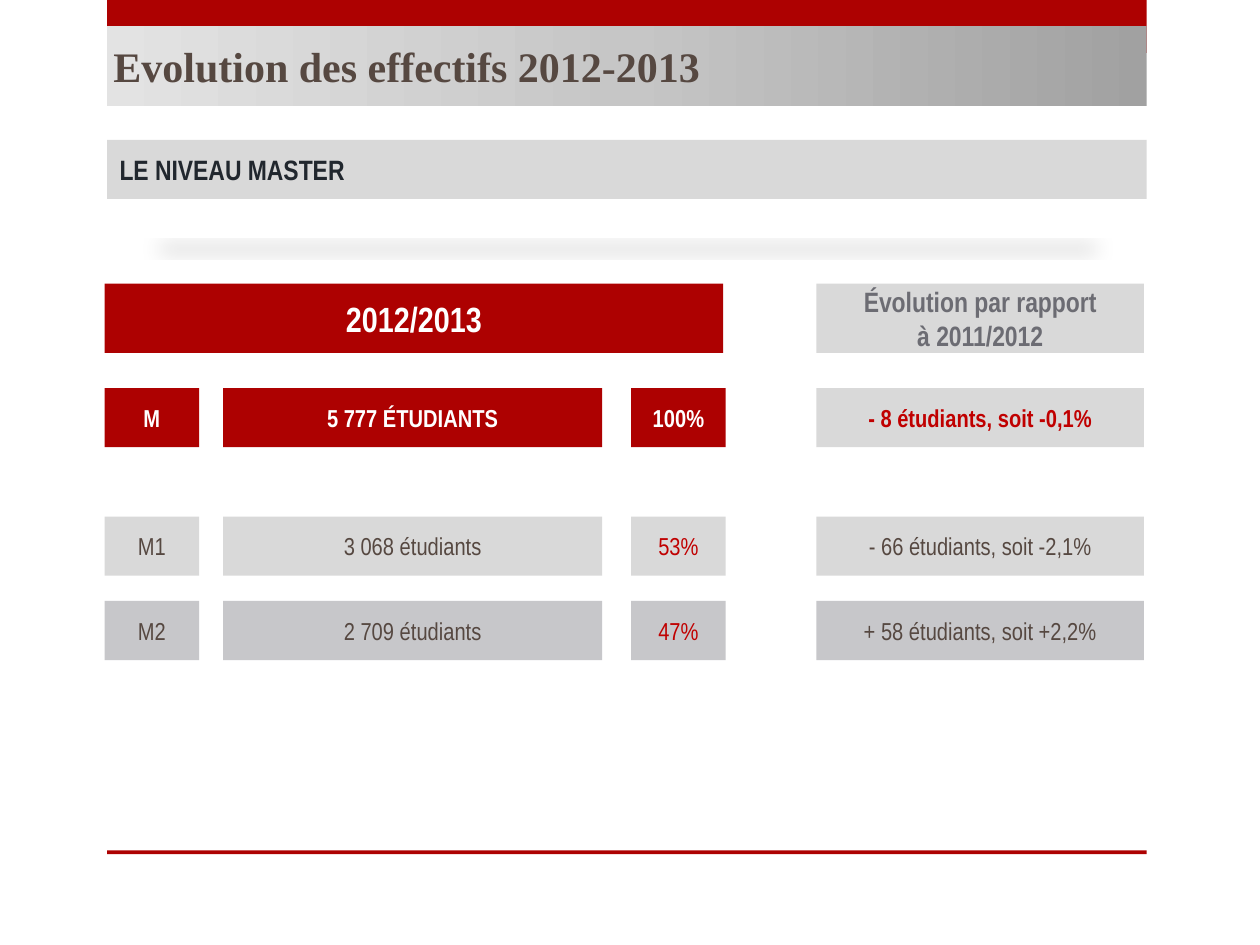
from copy import deepcopy
from dataclasses import dataclass

from lxml import etree
from pptx import Presentation
from pptx.dml.color import RGBColor
from pptx.enum.shapes import MSO_SHAPE
from pptx.enum.text import MSO_ANCHOR, PP_ALIGN
from pptx.oxml.ns import qn
from pptx.util import Inches, Pt

RECT = MSO_SHAPE.RECTANGLE
MIDDLE = MSO_ANCHOR.MIDDLE
LEFT, CENTER = PP_ALIGN.LEFT, PP_ALIGN.CENTER


@dataclass(frozen=True)
class Theme:
    red: str = "AD0101"
    accent: str = "C00000"
    white: str = "FFFFFF"
    brown: str = "564841"
    ink: str = "21272E"
    slate: str = "6C6C73"
    light: str = "D9D9D9"
    mid: str = "C7C7CA"
    fade: tuple = ("A1A1A1", "C6C6C6", "E3E3E3")
    serif: str = "Times New Roman"
    sans: str = "Arial Narrow"
    title: int = 24
    year: int = 20
    head: int = 16
    body: int = 14


THEME = Theme()
EDGE, SPAN = 0.85, 8.25
ROW_H = 0.47
# Left and width of the columns: level, students, share, change
COLS = ((0.83, 0.75), (1.77, 3.01), (5.01, 0.75), (6.48, 2.6))


def add_box(slide, left, top, width, height, fill):
    box = slide.shapes.add_shape(
        RECT, Inches(left), Inches(top), Inches(width), Inches(height))
    box.shadow.inherit = False
    box.line.fill.background()
    box.fill.solid()
    box.fill.fore_color.rgb = RGBColor.from_string(fill)
    return box


def add_text(box, lines, size, color, bold=True, align=CENTER, font=THEME.sans):
    frame = box.text_frame
    frame.word_wrap = True
    frame.vertical_anchor = MIDDLE
    for i, line in enumerate(lines):
        para = frame.add_paragraph() if i else frame.paragraphs[0]
        para.alignment = align
        run = para.add_run()
        run.text = line
        run.font.size = Pt(size)
        run.font.name = font
        run.font.bold = bold
        run.font.color.rgb = RGBColor.from_string(color)


def set_fade(box, colors):
    """Fill the box with evenly spaced colours, from right to left."""
    fill = box.fill
    fill.gradient()
    fill.gradient_angle = 180
    first = next(box._element.spPr.iter(qn("a:gs")))
    for _ in colors[2:]:
        first.addnext(deepcopy(first))
    for i, (stop, color) in enumerate(zip(fill.gradient_stops, colors)):
        stop.position = i / (len(colors) - 1)
        stop.color.rgb = RGBColor.from_string(color)


def cast_shadow(box):
    """Add a flat, soft shadow that lies below the box."""
    effects = box._element.spPr.find(qn("a:effectLst"))
    shadow = etree.SubElement(
        effects, qn("a:outerShdw"), blurRad=str(Pt(12)), dist=str(Pt(25)),
        dir="5400000", sx="90000", sy="-19000", rotWithShape="0")
    color = etree.SubElement(shadow, qn("a:srgbClr"), val="000000")
    etree.SubElement(color, qn("a:alpha"), val="15000")


def add_frame(slide):
    add_box(slide, EDGE, 0, SPAN, 0.42, THEME.red)
    add_box(slide, EDGE, 6.75, SPAN, 0.03, THEME.red)


def add_title(slide, text):
    box = add_box(slide, EDGE, 0.21, SPAN, 0.63, THEME.light)
    set_fade(box, THEME.fade)
    frame = box.text_frame
    frame.margin_left = frame.margin_right = Inches(0.05)
    frame.margin_top = frame.margin_bottom = 0
    add_text(box, [text], THEME.title, THEME.brown, align=LEFT, font=THEME.serif)


def add_band(slide, text):
    box = add_box(slide, EDGE, 1.11, SPAN, ROW_H, THEME.light)
    cast_shadow(box)
    add_text(box, [text], THEME.head, THEME.ink, align=LEFT)


def add_heads(slide):
    top, height = 2.25, 0.55
    year = add_box(slide, COLS[0][0], top, 4.91, height, THEME.red)
    add_text(year, ["2012/2013"], THEME.year, THEME.white)
    left, width = COLS[3]
    change = add_box(slide, left, top, width, height, THEME.light)
    add_text(change, ["Évolution par rapport", "à 2011/2012"],
             THEME.head, THEME.slate)


def add_row(slide, top, texts, fills, colors, bold=False):
    for (left, width), text, fill, color in zip(COLS, texts, fills, colors):
        box = add_box(slide, left, top, width, ROW_H, fill)
        add_text(box, [text], THEME.body, color, bold)


def main():
    t = THEME
    deck = Presentation()
    deck.slide_width, deck.slide_height = Inches(10), Inches(7.5)
    slide = deck.slides.add_slide(deck.slide_layouts[6])
    add_frame(slide)
    add_title(slide, "Evolution des effectifs 2012-2013")
    add_band(slide, "LE NIVEAU MASTER")
    add_heads(slide)
    add_row(slide, 3.08,
            ("M", "5 777 ÉTUDIANTS", "100%", "- 8 étudiants, soit -0,1%"),
            [t.red] * 3 + [t.light], [t.white] * 3 + [t.accent], bold=True)
    plain = (t.brown, t.brown, t.accent, t.brown)
    add_row(slide, 4.1,
            ("M1", "3 068 étudiants", "53%", "- 66 étudiants, soit -2,1%"),
            [t.light] * 4, plain)
    add_row(slide, 4.77,
            ("M2", "2 709 étudiants", "47%", "+ 58 étudiants, soit +2,2%"),
            [t.mid] * 4, plain)
    deck.save("out.pptx")


if __name__ == "__main__":
    main()
